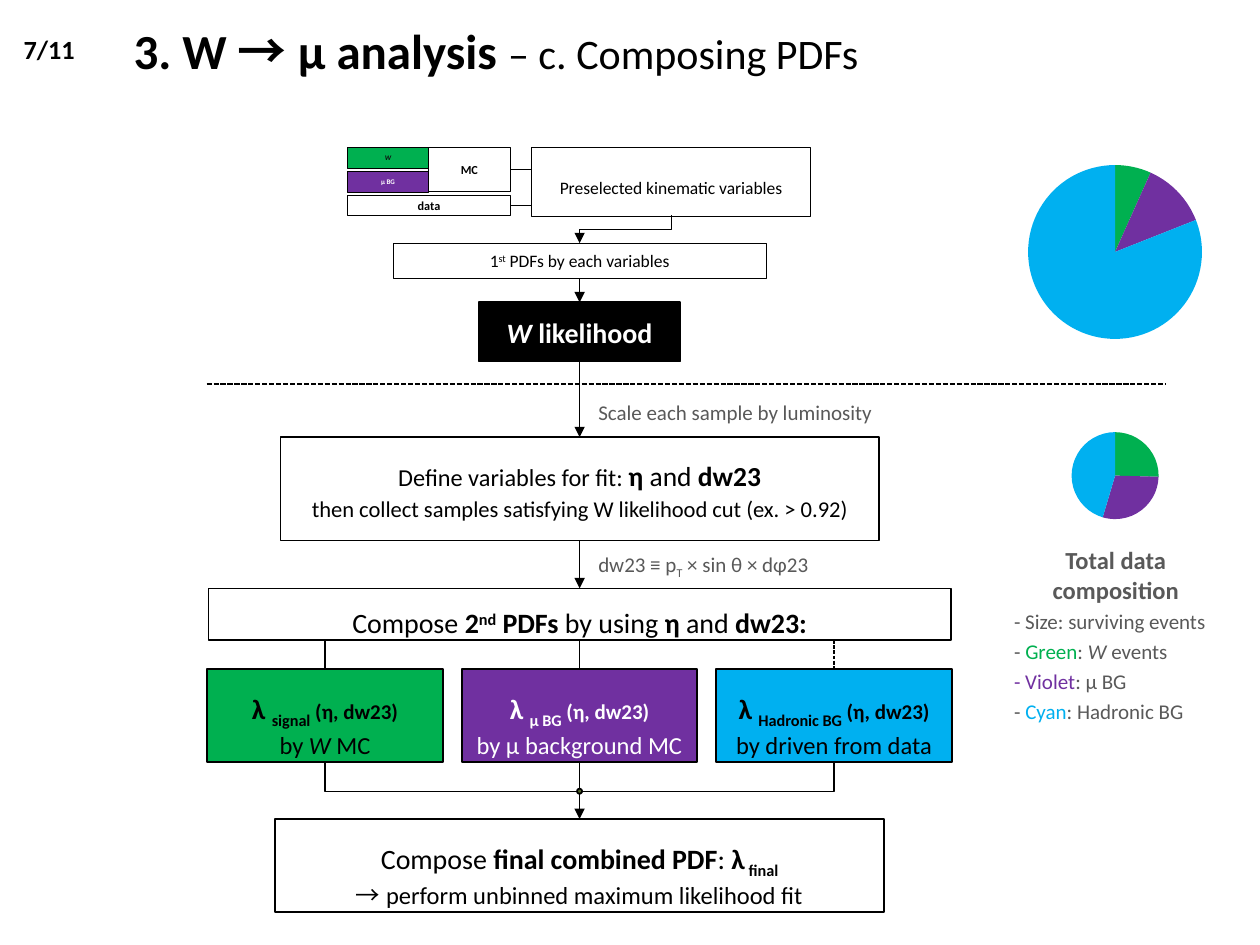
from itertools import accumulate

from lxml import etree
from pptx import Presentation
from pptx.dml.color import RGBColor
from pptx.enum.dml import MSO_LINE
from pptx.enum.shapes import MSO_CONNECTOR, MSO_SHAPE
from pptx.enum.text import MSO_ANCHOR, PP_ALIGN
from pptx.oxml.ns import qn
from pptx.util import Inches, Pt

RECTANGLE, OVAL, PIE = MSO_SHAPE.RECTANGLE, MSO_SHAPE.OVAL, MSO_SHAPE.PIE
STRAIGHT, ELBOW = MSO_CONNECTOR.STRAIGHT, MSO_CONNECTOR.ELBOW
DASH = MSO_LINE.SQUARE_DOT
TOP, MIDDLE = MSO_ANCHOR.TOP, MSO_ANCHOR.MIDDLE
LEFT, CENTER = PP_ALIGN.LEFT, PP_ALIGN.CENTER
SIDE_TOP, SIDE_BOTTOM, SIDE_RIGHT = 0, 2, 3

COLORS = {
    "black": "000000", "white": "FFFFFF", "ink": "0D0D0D", "gray": "595959",
    "green": "00B050", "violet": "7030A0", "cyan": "00B0F0", "olive": "4F6228",
}
FONT, ARROW_FONT = "Calibri", "Noto Sans CJK KR"

# The grid has 100 columns and 75 rows, each a tenth of an inch
AXIS = 46          # column on which the flow runs down
PITCH = 20.2       # distance between the three PDF columns
BOLD, ITALIC, PLAIN = {"bold": True}, {"italic": True}, {"bold": False}
SUB, SUPER = {"baseline": -25}, {"baseline": 30}
FULL_TURN, TWELVE_O_CLOCK = 216, 162   # pie adjustment units


def grid(cells):
    return Inches(cells / 10)


def color(name):
    return RGBColor.from_string(COLORS[name])


def write(shape, paragraphs, base, anchor=MIDDLE, align=CENTER, margins=None):
    """Fill a shape with paragraphs, each a (spans, line spacing, alignment) tuple."""
    frame = shape.text_frame
    frame.word_wrap = True
    frame.vertical_anchor = anchor
    for name, value in (margins or {}).items():
        setattr(frame, name, value)
    for index, (spans, spacing, own_align) in enumerate(paragraphs):
        para = frame.paragraphs[0] if index == 0 else frame.add_paragraph()
        para.alignment = own_align or align
        if spacing:
            para.line_spacing = spacing
        for words, *changes in spans:
            add_span(para, words, base, changes)


def add_span(para, words, base, changes):
    values = {"name": FONT, "bold": False, "italic": False, "color": "black", **base}
    for change in changes:
        values.update(change)
    span = para.add_run()
    span.text = words
    span.font.color.rgb = color(values.pop("color"))
    baseline = values.pop("baseline", 0)
    values["size"] = Pt(values["size"])
    for name, value in values.items():
        setattr(span.font, name, value)
    properties = span.font._element
    if baseline:
        properties.set("baseline", str(baseline * 1000))
    if values["name"] == ARROW_FONT:
        east_asian = etree.Element(qn("a:ea"), typeface=ARROW_FONT)
        properties.find(qn("a:latin")).addnext(east_asian)


def line_of(*spans, spacing=None, align=None):
    return spans, spacing, align


def add_figure(page, kind, left, top, width, height, fill=None, line=None):
    figure = page.shapes.add_shape(kind, grid(left), grid(top), grid(width), grid(height))
    figure.shadow.inherit = False
    if fill:
        figure.fill.solid()
        figure.fill.fore_color.rgb = color(fill)
    else:
        figure.fill.background()
    if line:
        figure.line.color.rgb = color("black")
        figure.line.width = Pt(line)
    else:
        figure.line.fill.background()
    return figure


def add_box(page, left, top, width, height, paragraphs, size, fill="white", line=1,
            margins=None, **base):
    box = add_figure(page, RECTANGLE, left, top, width, height, fill, line)
    write(box, paragraphs, {"size": size, **base}, margins=margins)
    return box


def add_step(page, top, width, height, *rest, center=AXIS, **options):
    return add_box(page, center - width / 2, top, width, height, *rest, **options)


def add_label(page, left, top, width, height, paragraphs, base, **options):
    label = page.shapes.add_textbox(grid(left), grid(top), grid(width), grid(height))
    write(label, paragraphs, base, **options)


def style_line(link, weight, arrow=False, dash=None):
    link.line.color.rgb = color("black")
    link.line.width = Pt(weight)
    if dash:
        link.line.dash_style = dash
    if arrow:
        etree.SubElement(link.line._get_or_add_ln(), qn("a:tailEnd"), type="triangle")
    etree.SubElement(link._element.spPr, qn("a:effectLst"))


def add_link(page, start, end, weight=0.75, source=None, target=None, **style):
    """Straight line; source and target are (box, side) pairs to join."""
    link = page.shapes.add_connector(STRAIGHT, *map(grid, (*start, *end)))
    if source:
        link.begin_connect(*source)
    if target:
        link.end_connect(*target)
    style_line(link, weight, **style)


def add_drop(page, start, end, weight, preset, **style):
    """Elbow that leaves downwards: a turned connector centred between its ends."""
    (x1, y1), (x2, y2) = start, end
    middle_x, middle_y = (x1 + x2) / 2, (y1 + y2) / 2
    run, rise = (y2 - y1) / 2, abs(x2 - x1) / 2
    goes_left = x2 < x1
    if not goes_left:
        run = -run
    link = page.shapes.add_connector(ELBOW, *map(grid, (
        middle_x - run, middle_y - rise, middle_x + run, middle_y + rise)))
    properties = link._element.spPr
    properties.find(qn("a:xfrm")).set("rot", str((90 if goes_left else 270) * 60000))
    properties.find(qn("a:prstGeom")).set("prst", preset)
    style_line(link, weight, **style)


def add_pie(page, center_y, size, shares):
    """Sectors of green, violet and cyan, clockwise from the top, in percent."""
    edges = [(TWELVE_O_CLOCK + FULL_TURN * share / 100) % FULL_TURN
             for share in accumulate([0, *shares])]
    for name, start, end in zip(("green", "violet", "cyan"), edges, edges[1:]):
        sector = add_figure(page, PIE, 88.5 - size / 2, center_y - size / 2, size, size, name)
        sector.adjustments[0], sector.adjustments[1] = start, end


def add_heading(page):
    add_label(page, 0, 0, 7.8, 7.8, [line_of(("7/11",))], {"size": 15, "bold": True})
    title = line_of(("3. W ",), ("→ ", {"name": ARROW_FONT}), ("μ analysis ",),
                    ("– c. Composing PDFs", PLAIN, {"size": 24}))
    add_label(page, 7.8, 0, 92.2, 7.9, [title], {"size": 28, "bold": True},
              align=LEFT, margins={"margin_left": grid(2.8)})


def add_likelihood_part(page):
    tight = {"margin_top": 0, "margin_bottom": 0}
    small = {"line": 0.5, "margins": tight}
    add_link(page, (16.4, 30.5), (92.5, 30.5), 1, dash=DASH)
    # Samples
    add_box(page, 27.6, 11.7, 6.4, 1.7, [line_of(("W", ITALIC))], 4, "green",
            bold=True, color="ink", **small)
    add_box(page, 27.6, 13.6, 6.4, 1.7, [line_of(("μ BG",))], 4, "violet",
            bold=True, color="white", **small)
    simulation = add_box(page, 34, 11.7, 6.5, 3.5, [line_of(("MC",))], 7, None,
                         bold=True, **small)
    data = add_box(page, 27.6, 15.5, 12.9, 1.6, [line_of(("data",))], 7, None,
                   bold=True, **small)
    add_box(page, 42.2, 11.7, 22.1, 5.5,
            [line_of(("Preselected kinematic variables",), spacing=1.5)], 10, line=0.5)
    for sample, row in ((simulation, 13.45), (data, 16.3)):
        add_link(page, (40.5, row), (42.2, row), 0.5, (sample, SIDE_RIGHT))
    # First PDFs and likelihood
    first = add_step(page, 19.3, 29.6, 2.8, [line_of(
        ("1",), ("st", SUPER), (" PDFs by each variables",))], 10, line=0.5)
    add_drop(page, (53.3, 17.1), (AXIS, 19.3), 0.5, "bentConnector3", arrow=True)
    likelihood = add_step(page, 24, 16, 4.7, [line_of(("W", ITALIC), (" likelihood",))],
                          16, fill="black", bold=True, color="white")
    add_link(page, (AXIS, 22.1), (AXIS, 24), 0.5, (first, SIDE_BOTTOM),
             (likelihood, SIDE_TOP), arrow=True)
    return likelihood


def add_fit_part(page, likelihood):
    big = {"size": 15.7}
    define = add_step(page, 34.7, 47.5, 8.2, [
        line_of(("Define variables for fit:", {"size": 13.9}), (" ",), ("η", BOLD, big),
                (" and ", big), ("dw23", BOLD, big), spacing=1.1),
        line_of(("then collect samples satisfying W likelihood cut (ex. > 0.92)",),
                spacing=1.1)], 12.9)
    add_link(page, (AXIS, 28.7), (AXIS, 34.7), 0.75, (likelihood, SIDE_BOTTOM),
             (define, SIDE_TOP), arrow=True)
    note = {"size": 12, "color": "gray"}
    notes = ((31.2, 24.4, [("Scale each sample by luminosity",)]),
             (43.3, 19.6, [("dw23 ≡ p",), ("T", SUB), (" × sin θ × dφ23",)]))
    for row, width, spans in notes:
        add_label(page, 46.5, row, width, 3, [line_of(*spans)], note, anchor=TOP, align=LEFT)
    compose = add_step(page, 46.7, 58.9, 4.1, [line_of(
        ("Compose ",), ("2", BOLD), ("nd", BOLD, SUPER), (" PDFs", BOLD), (" by using ",),
        ("η", BOLD), (" and ",), ("dw23:", BOLD), spacing=1.5)], 16)
    add_link(page, (AXIS, 42.9), (AXIS, 46.7), 0.75, (define, SIDE_BOTTOM),
             (compose, SIDE_TOP), arrow=True)
    # Three second PDFs, joined into the final one
    columns = [
        ("signal", "green", "black", [("by ",), ("W", ITALIC), (" MC",)], None),
        ("μ BG", "violet", "white", [("by μ background MC",)], None),
        ("Hadronic BG", "cyan", "black", [("by driven from data",)], DASH),
    ]
    junction = (AXIS, 62.8)
    for index, (name, fill, ink, origin, dash) in enumerate(columns):
        center = AXIS + (index - 1) * PITCH
        density = add_step(page, 53.1, 18.7, 7.4, [
            line_of(("λ ", BOLD, {"size": 16}), (name, BOLD, SUB, {"size": 16}),
                    (" (η, dw23)", BOLD, {"size": 12}), spacing=1.5),
            line_of(*origin)], 14, center=center, fill=fill, color=ink)
        source = (compose, SIDE_BOTTOM) if center == AXIS else None
        add_link(page, (center, 50.8), (center, 53.1), 0.75, source, (density, SIDE_TOP),
                 dash=dash)
        if center == AXIS:
            add_link(page, (center, 60.5), junction, 0.75, (density, SIDE_BOTTOM))
        else:
            add_drop(page, (center, 60.5), junction, 0.75, "bentConnector2")
    add_figure(page, OVAL, AXIS - 0.2, 62.6, 0.4, 0.4, "olive", 1)
    final = add_step(page, 65, 48.3, 7.4, [
        line_of(("Compose ",), ("final combined PDF", BOLD), (": ",), ("λ", BOLD),
                (" final", BOLD, SUB), spacing=1.5),
        line_of(("→ ", {"name": ARROW_FONT, "size": 14}),
                ("perform unbinned maximum likelihood fit", {"size": 14}))], 16)
    add_link(page, (AXIS, 63), (AXIS, 65), 0.75, target=(final, SIDE_TOP), arrow=True)


def add_composition(page):
    add_pie(page, 20, 13.8, (6.7, 12.3, 81))
    add_pie(page, 37.75, 6.9, (25.4, 29.2, 45.4))
    heading = [line_of((words, BOLD, {"size": 14}), align=CENTER)
               for words in ("Total data", "composition")]
    violet = {"color": "violet"}
    legend = [
        [("- Size: surviving events",)],
        [("- ",), ("Green", {"color": "green"}), (": ",), ("W", ITALIC), (" events",)],
        [("- Violet", violet), (": μ BG",)],
        [("- ",), ("Cyan", {"color": "cyan"}), (": Hadronic BG",)],
    ]
    rows = [line_of(*spans, spacing=Pt(17)) for spans in legend]
    add_label(page, 79.5, 42.8, 18.1, 15.3, heading + rows,
              {"size": 12, "color": "gray"}, anchor=TOP, align=LEFT)


def main():
    deck = Presentation()
    deck.slide_width, deck.slide_height = grid(100), grid(75)
    page = deck.slides.add_slide(deck.slide_layouts[6])
    add_heading(page)
    add_fit_part(page, add_likelihood_part(page))
    add_composition(page)
    deck.save("out.pptx")


if __name__ == "__main__":
    main()
